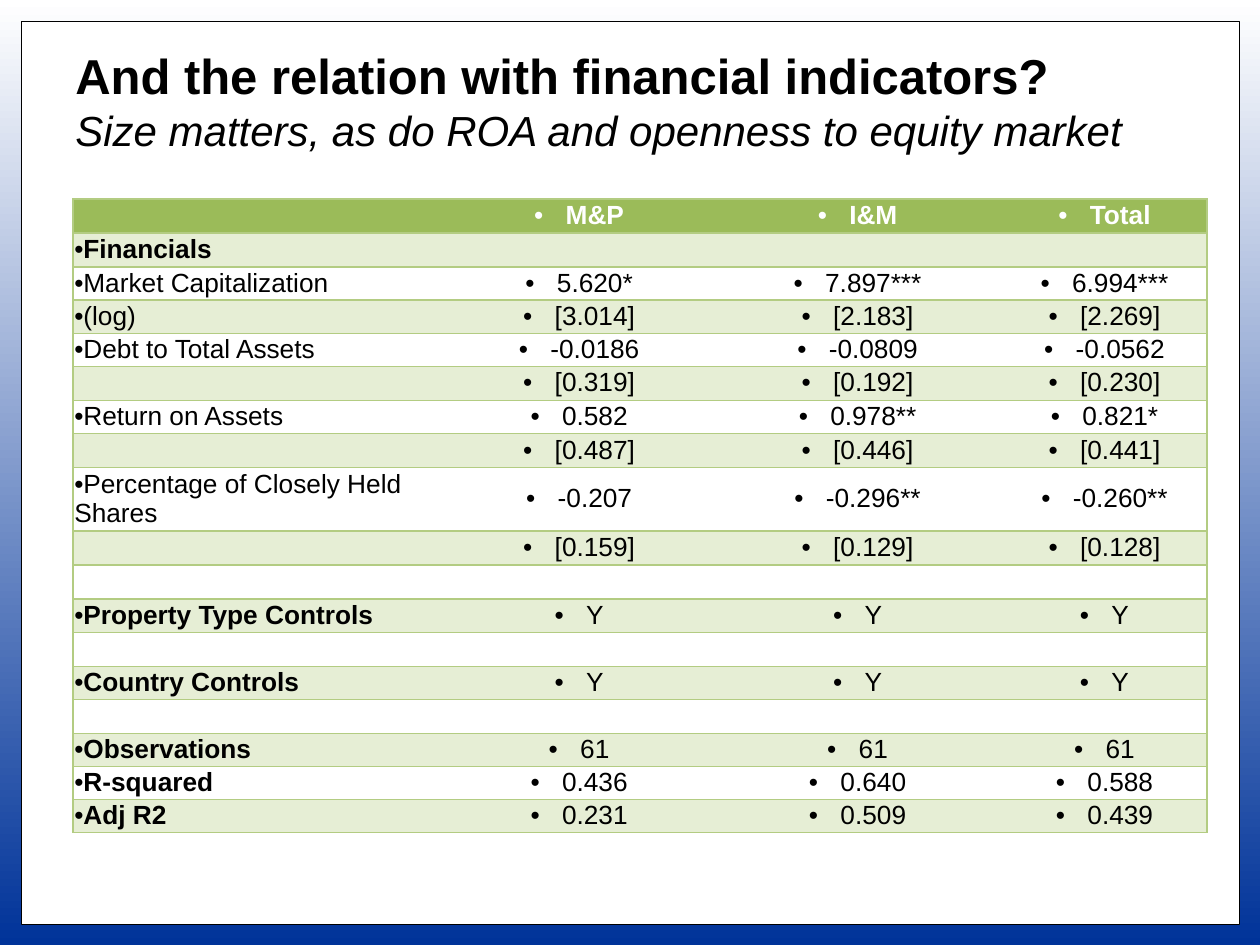
from dataclasses import dataclass

from lxml import etree
from pptx import Presentation
from pptx import util as u
from pptx.dml.color import RGBColor
from pptx.enum import shapes, text
from pptx.oxml.ns import qn

BLACK = RGBColor(0x00, 0x00, 0x00)
WHITE = RGBColor(0xFF, 0xFF, 0xFF)
NAVY = RGBColor(0x00, 0x33, 0x99)
GREEN = RGBColor(0x9B, 0xBB, 0x59)
PALE_GREEN = RGBColor(0xE6, 0xEE, 0xD5)
RULE_GREEN = RGBColor(0xB3, 0xCC, 0x82)
NO_TABLE_STYLE = "{2D5ABB26-0587-4C30-8999-92F81FD0307C}"
CELL_SIZE = 15
TABLE_HEIGHT = 4.95
TALL_ROW = 0.5
COLUMN_WIDTHS = (3.13, 1.95, 2.47, 1.45)


@dataclass(frozen=True)
class Result:
    label: str = ""
    values: tuple[str, ...] = ("", "", "")
    bold_label: bool = False
    tall: bool = False


RESULTS = [
    Result("Financials", bold_label=True),
    Result("Market Capitalization", ("5.620*", "7.897***", "6.994***")),
    Result("(log)", ("[3.014]", "[2.183]", "[2.269]")),
    Result("Debt to Total Assets", ("-0.0186", "-0.0809", "-0.0562")),
    Result("", ("[0.319]", "[0.192]", "[0.230]")),
    Result("Return on Assets", ("0.582", "0.978**", "0.821*")),
    Result("", ("[0.487]", "[0.446]", "[0.441]")),
    Result("Percentage of Closely Held Shares", ("-0.207", "-0.296**", "-0.260**"), tall=True),
    Result("", ("[0.159]", "[0.129]", "[0.128]")),
    Result(),
    Result("Property Type Controls", ("Y", "Y", "Y"), bold_label=True),
    Result(),
    Result("Country Controls", ("Y", "Y", "Y"), bold_label=True),
    Result(),
    Result("Observations", ("61", "61", "61"), bold_label=True),
    Result("R-squared", ("0.436", "0.640", "0.588"), bold_label=True),
    Result("Adj R2", ("0.231", "0.509", "0.439"), bold_label=True),
]


def write(paragraph, wording: str, *, size: float, color: RGBColor = BLACK,
          bold: bool = False, italic: bool = False) -> None:
    run = paragraph.add_run()
    run.text = wording
    run.font.name = "Arial"
    run.font.size = u.Pt(size)
    run.font.bold = bold
    run.font.italic = italic
    run.font.color.rgb = color


def add_bullet(paragraph) -> None:
    properties = paragraph._p.get_or_add_pPr()
    properties.set("marL", "0")
    properties.set("indent", str(-u.Inches(0.25)))
    etree.SubElement(properties, qn("a:buFont"), typeface="Arial")
    etree.SubElement(properties, qn("a:buChar"), char="•")


def add_border(cell, side: str) -> None:
    border = etree.SubElement(cell._tc.get_or_add_tcPr(), qn(f"a:{side}"), w=str(u.Pt(1)))
    solid = etree.SubElement(border, qn("a:solidFill"))
    etree.SubElement(solid, qn("a:srgbClr"), val=str(RULE_GREEN))


def fill_cell(cell, wording: str, *, fill: RGBColor, sides: list[str],
              centred: bool, color: RGBColor, bold: bool) -> None:
    cell.margin_left = cell.margin_right = u.Inches(0.01)
    cell.margin_top = cell.margin_bottom = u.Inches(0.01)
    cell.vertical_anchor = text.MSO_ANCHOR.MIDDLE
    for side in sides:
        add_border(cell, side)
    cell.fill.solid()
    cell.fill.fore_color.rgb = fill
    paragraph = cell.text_frame.paragraphs[0]
    if not wording:
        etree.SubElement(paragraph._p, qn("a:endParaRPr"), sz=str(CELL_SIZE * 100))
        return
    add_bullet(paragraph)
    paragraph.line_spacing = 0.97
    paragraph.alignment = text.PP_ALIGN.CENTER if centred else text.PP_ALIGN.LEFT
    write(paragraph, wording, size=CELL_SIZE, color=color, bold=bold)


def add_results_table(slide, results: list[Result]) -> None:
    rows = [Result("", ("M&P", "I&M", "Total")), *results]
    last_column = len(COLUMN_WIDTHS) - 1
    row_height = (TABLE_HEIGHT - TALL_ROW) / (len(rows) - 1)
    frame = slide.shapes.add_table(
        len(rows), len(COLUMN_WIDTHS), u.Inches(0.58), u.Inches(1.58),
        u.Inches(sum(COLUMN_WIDTHS)), u.Inches(TABLE_HEIGHT))
    table = frame.table
    table.first_row = table.horz_banding = False
    table._tbl.tblPr.find(qn("a:tableStyleId")).text = NO_TABLE_STYLE
    for column, width in zip(table.columns, COLUMN_WIDTHS):
        column.width = u.Inches(width)
    for r, result in enumerate(rows):
        header = r == 0
        table.rows[r].height = u.Inches(TALL_ROW if result.tall else row_height)
        fill = GREEN if header else PALE_GREEN if r % 2 else WHITE
        for c, wording in enumerate((result.label, *result.values)):
            sides = ["lnL"] * (c == 0) + ["lnR"] * (c == last_column) + ["lnT", "lnB"]
            fill_cell(table.cell(r, c), wording, fill=fill, sides=sides, centred=c > 0,
                      color=WHITE if header else BLACK,
                      bold=header or (c == 0 and result.bold_label))


def add_backdrop(slide) -> None:
    backdrop = slide.background.fill
    backdrop.gradient()
    backdrop.gradient_angle = 270
    for stop, color in zip(backdrop.gradient_stops, (WHITE, NAVY)):
        stop.color.rgb = color
    panel = slide.shapes.add_shape(
        shapes.MSO_SHAPE.RECTANGLE, u.Inches(0.17), u.Inches(0.17),
        u.Inches(9.67), u.Inches(7.17))
    panel.shadow.inherit = False
    panel.fill.solid()
    panel.fill.fore_color.rgb = WHITE
    panel.line.color.rgb = BLACK
    panel.line.width = u.Pt(0.75)


def add_title(slide) -> None:
    title = slide.shapes.add_textbox(
        u.Inches(0.5), u.Inches(0.17), u.Inches(9.08), u.Inches(1.25)).text_frame
    title.word_wrap = True
    title.vertical_anchor = text.MSO_ANCHOR.MIDDLE
    heading = title.paragraphs[0]
    write(heading, "And the relation with financial indicators?", size=28, bold=True)
    heading.add_line_break()
    write(heading, "Size matters, as do ROA and openness to equity market", size=24, italic=True)


def main() -> None:
    deck = Presentation()
    deck.slide_width = u.Inches(10)
    deck.slide_height = u.Inches(7.5)
    slide = deck.slides.add_slide(deck.slide_layouts[6])
    add_backdrop(slide)
    add_title(slide)
    add_results_table(slide, RESULTS)
    deck.save("out.pptx")


if __name__ == "__main__":
    main()
